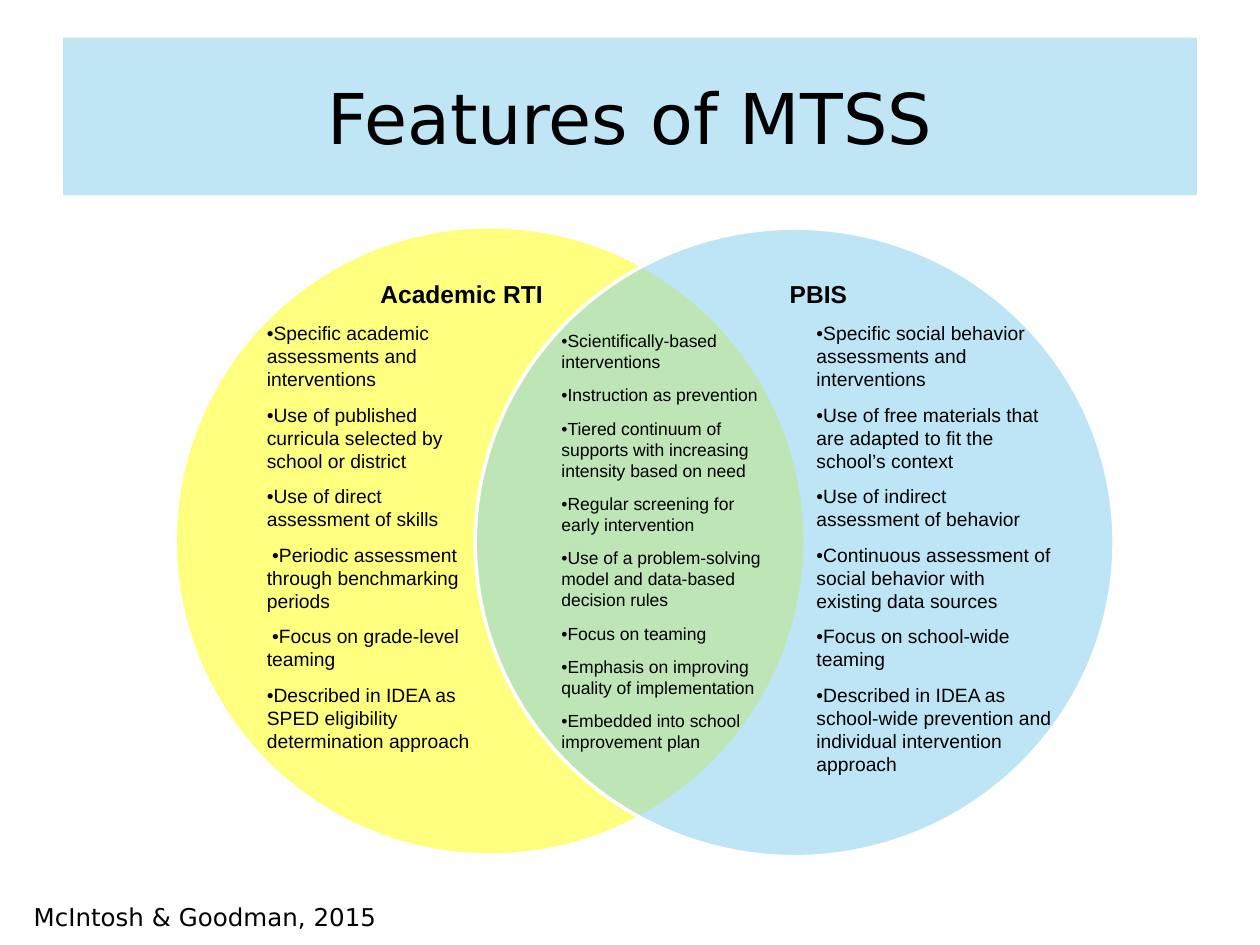
from lxml import etree
from pptx import Presentation
from pptx.dml.color import RGBColor
from pptx.enum.shapes import MSO_SHAPE
from pptx.enum.text import MSO_ANCHOR, PP_ALIGN
from pptx.oxml.ns import qn
from pptx.util import Cm, Pt

OVAL = MSO_SHAPE.OVAL
MIDDLE = MSO_ANCHOR.MIDDLE
CENTER = PP_ALIGN.CENTER
TITLE_ONLY = 5

SANS = "DejaVu Sans"
ARIAL = "Arial"
BLACK = "000000"
WHITE = "FFFFFF"
ITEM_GAP = 7  # points between list items

TITLE = "Features of MTSS"
CITATION = "McIntosh & Goodman, 2015"

# Boxes are left, top, width, height in centimetres.
CIRCLES = [
    ((3.53, 4.57, 12.7, 12.67), "FFFF00"),
    ((9.58, 4.6, 12.88, 12.67), "7FCDED"),
]
HEADINGS = [
    ((7.42, 5.51, 5.28, 0.86), "Academic RTI"),
    ((15.67, 5.51, 4.6, 0.86), "PBIS"),
]
LISTS = [
    ((5.13, 6.35, 4.6, 9.27), 11, [
        "•Specific academic assessments and interventions",
        "•Use of published curricula selected by school or district",
        "•Use of direct assessment of skills",
        " •Periodic assessment through benchmarking periods",
        " •Focus on grade-level teaming",
        "•Described in IDEA as SPED eligibility determination approach",
    ]),
    ((16.21, 6.35, 5.28, 9.75), 11, [
        "•Specific social behavior assessments and interventions",
        "•Use of free materials that are adapted to fit the school’s context",
        "•Use of indirect assessment of behavior",
        "•Continuous assessment of social behavior with existing data sources",
        "•Focus on school-wide teaming",
        "•Described in IDEA as school-wide prevention and individual "
        "intervention approach",
    ]),
    ((11.07, 6.53, 4.6, 8.89), 10, [
        "•Scientifically-based interventions",
        "•Instruction as prevention",
        "•Tiered continuum of supports with increasing intensity based on need",
        "•Regular screening for early intervention",
        "•Use of a problem-solving model and data-based decision rules",
        "•Focus on teaming",
        "•Emphasis on improving quality of implementation",
        "•Embedded into school improvement plan",
    ]),
]


def color(value):
    return RGBColor.from_string(value)


def lengths(box):
    return [Cm(value) for value in box]


def fill_translucent(shape, value, opacity):
    """Fill a shape with a colour at the given opacity in percent."""
    shape.fill.solid()
    shape.fill.fore_color.rgb = color(value)
    color_element = shape.fill._xPr.find(qn("a:solidFill"))[0]
    alpha = etree.SubElement(color_element, qn("a:alpha"))
    alpha.set("val", str(opacity * 1000))


def write(text_frame, lines, font_name, size, bold=False):
    """Put one paragraph per line into the frame and format its runs."""
    text_frame.word_wrap = True
    text_frame.text = "\n".join(lines)
    for paragraph in text_frame.paragraphs:
        for run in paragraph.runs:
            run.font.name = font_name
            run.font.size = Pt(size)
            run.font.bold = bold
            run.font.color.rgb = color(BLACK)
    for paragraph in text_frame.paragraphs[:-1]:
        paragraph.space_after = Pt(ITEM_GAP)


def add_text(slide, box, lines, font_name, size, bold=False):
    text_box = slide.shapes.add_textbox(*lengths(box))
    write(text_box.text_frame, lines, font_name, size, bold)
    return text_box


def add_title(slide):
    title = slide.shapes.title
    title.left, title.top, title.width, title.height = lengths(
        (1.27, 0.76, 22.86, 3.18))
    fill_translucent(title, "A9DCF2", 72)
    write(title.text_frame, [TITLE], SANS, 40)
    title.text_frame.vertical_anchor = MIDDLE
    title.text_frame.paragraphs[0].alignment = CENTER


def add_circles(slide):
    group = slide.shapes.add_group_shape()
    for box, fill in CIRCLES:
        circle = group.shapes.add_shape(OVAL, *lengths(box))
        circle.shadow.inherit = False
        fill_translucent(circle, fill, 50)
        circle.line.color.rgb = color(WHITE)
        circle.line.width = Pt(2)


def main():
    presentation = Presentation()
    presentation.slide_width = Cm(25.4)
    presentation.slide_height = Cm(19.05)
    slide = presentation.slides.add_slide(
        presentation.slide_layouts[TITLE_ONLY])

    add_title(slide)
    citation = add_text(slide, (0.43, 17.93, 20.42, 1.12), [CITATION], SANS, 14)
    citation.text_frame.margin_top = citation.text_frame.margin_bottom = Cm(0.25)
    add_circles(slide)
    for box, heading in HEADINGS:
        add_text(slide, box, [heading], ARIAL, 14, bold=True)
    for box, size, items in LISTS:
        add_text(slide, box, items, ARIAL, size)

    presentation.save("out.pptx")


if __name__ == "__main__":
    main()
